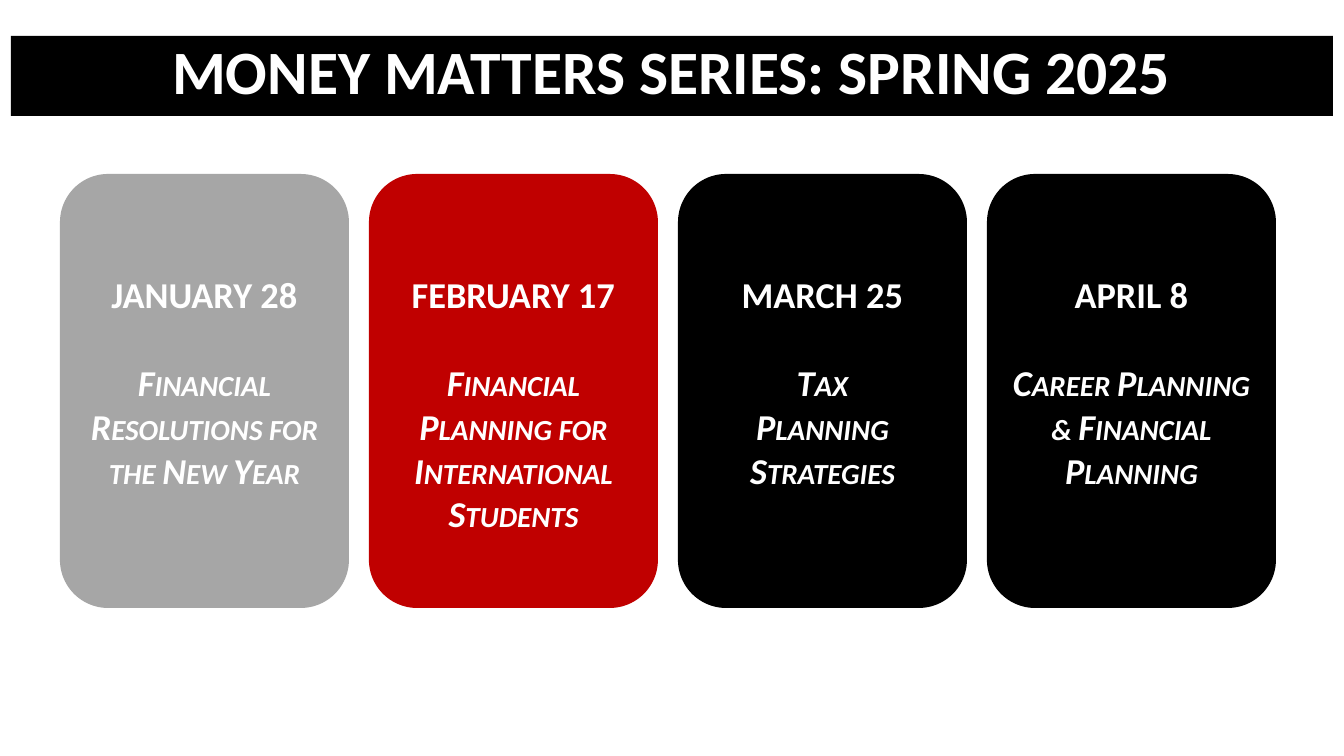
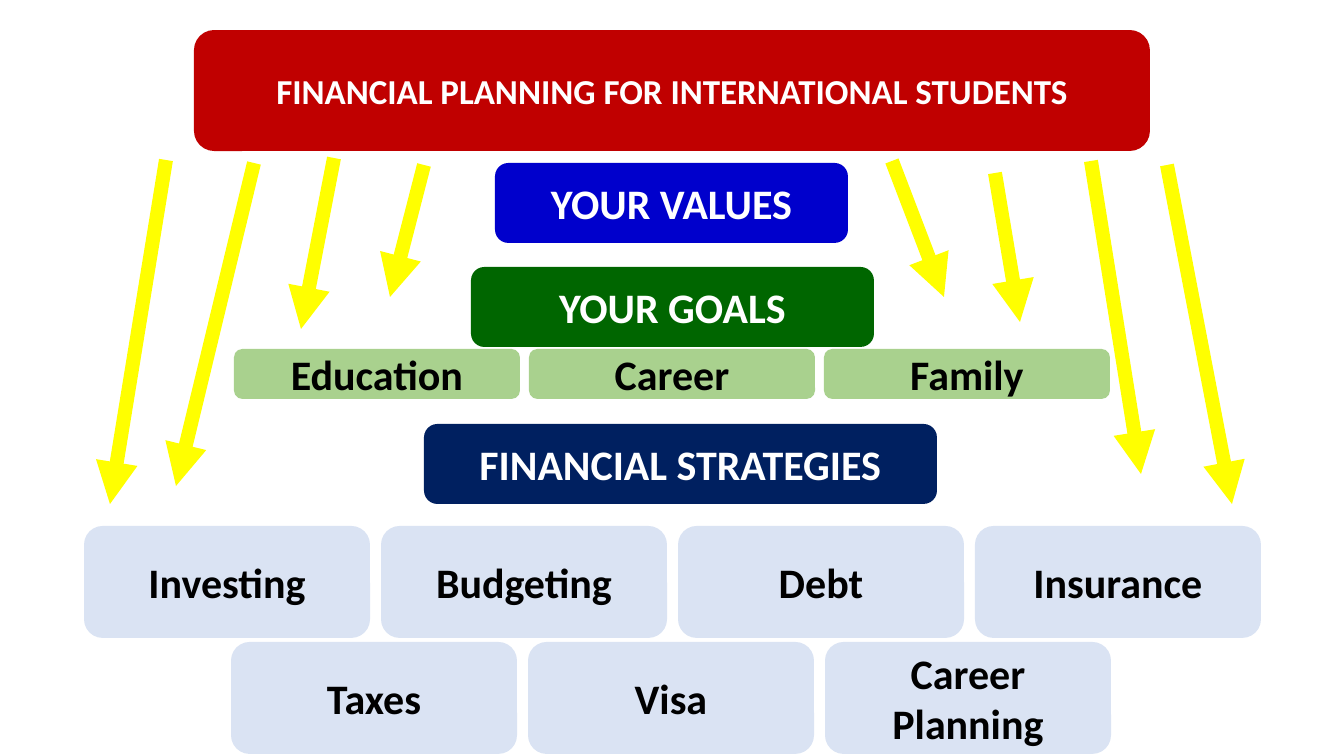
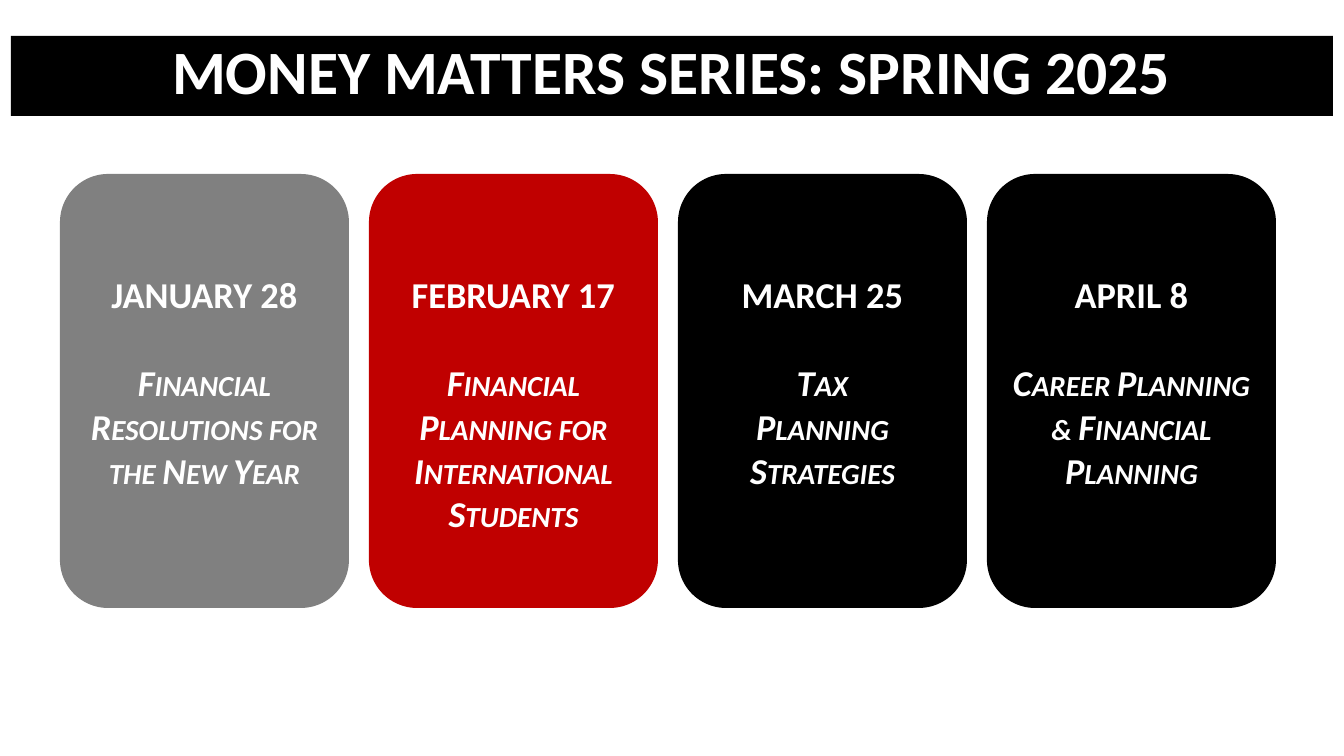
from lxml import etree
from pptx import Presentation
from pptx.dml.color import RGBColor
from pptx.enum.shapes import MSO_CONNECTOR, MSO_SHAPE
from pptx.enum.text import MSO_ANCHOR, PP_ALIGN
from pptx.oxml.ns import qn
from pptx.util import Pt

RECT, ROUND = MSO_SHAPE.RECTANGLE, MSO_SHAPE.ROUNDED_RECTANGLE
LINE = MSO_CONNECTOR.STRAIGHT
TOP, MIDDLE = MSO_ANCHOR.TOP, MSO_ANCHOR.MIDDLE
CENTER = PP_ALIGN.CENTER

# Colours and font
FONT = "Calibri"
WHITE, BLACK, RED = "FFFFFF", "000000", "C00000"
BLUE, GREEN, NAVY = "0000CC", "006600", "002060"
LIME, PALE, YELLOW = "A9D18E", "DAE3F3", "FFFF00"


def px(n):
    """Turn px into EMU; the slide is 1344 px wide."""
    return round(n * 12192000 / 1344)


def rgb(code):
    return RGBColor.from_string(code)


def write(para, text, size=30, color=WHITE, italic=False, caps=False,
          before=0, spacing=None):
    """Fill a paragraph with centred bold text."""
    para.alignment = CENTER
    para.space_before = Pt(before)
    if spacing:
        para.line_spacing = spacing
    para.text = text
    for run in para.runs:
        font = run.font
        font.name, font.size = FONT, Pt(size)
        font.bold, font.italic = True, italic
        font.color.rgb = rgb(color)
        if caps:
            run._r.get_or_add_rPr().set("cap", "small")


class Deck:
    def __init__(self):
        self.prs = Presentation()
        self.prs.slide_width, self.prs.slide_height = px(1344), px(756)
        self.slide = None

    def new(self):
        self.slide = self.prs.slides.add_slide(self.prs.slide_layouts[6])

    def block(self, x, y, w, h, fill, kind=ROUND, anchor=MIDDLE, inset=5):
        """Add a plain filled shape and return its text frame."""
        shape = self.slide.shapes.add_shape(kind, px(x), px(y), px(w), px(h))
        shape.shadow.inherit = False
        shape.fill.solid()
        shape.fill.fore_color.rgb = rgb(fill)
        shape.line.fill.background()
        frame = shape.text_frame
        frame.word_wrap = True
        frame.vertical_anchor = anchor
        frame.margin_top = px(inset)
        return frame

    def box(self, x, y, w, h, fill, text, **style):
        write(self.block(x, y, w, h, fill).paragraphs[0], text, **style)

    def row(self, x, y, h, step, fill, names):
        for i, name in enumerate(names):
            self.box(x + i * step, y, 286, h, fill, name, color=BLACK)

    def band(self, text):
        frame = self.block(11, 36, 1322, 80, BLACK, kind=RECT, anchor=TOP)
        write(frame.paragraphs[0], text, size=44, spacing=0.9)

    def card(self, x, fill, date, topic):
        frame = self.block(x, 174, 289, 434, fill, anchor=TOP, inset=84)
        write(frame.paragraphs[0], date, size=26)
        write(frame.add_paragraph(), topic, size=26, italic=True, caps=True,
              before=32)

    def arrow(self, x1, y1, x2, y2):
        link = self.slide.shapes.add_connector(
            LINE, px(x1), px(y1), px(x2), px(y2))
        link.line.color.rgb = rgb(YELLOW)
        link.line.width = Pt(10)
        ln = link.line._get_or_add_ln()
        etree.SubElement(ln, qn("a:tailEnd"), type="triangle")
        etree.SubElement(link._element.spPr, qn("a:effectLst"))


TALKS = [
    ("JANUARY 28", "Financial Resolutions for the New Year"),
    ("FEBRUARY 17", "Financial Planning for International Students"),
    ("MARCH 25", "Tax\vPlanning Strategies"),
    ("APRIL 8", "Career Planning\v& Financial Planning"),
]

ARROWS = [
    (166, 160, 110, 504), (254, 163, 176, 486),
    (334, 158, 301, 329), (424, 165, 390, 297),
    (892, 161, 944, 297), (995, 173, 1020, 322),
    (1091, 161, 1141, 474), (1167, 165, 1232, 504),
]


def series(deck, first):
    """Build the series overview; first is the fill of the first card."""
    deck.new()
    deck.band("MONEY MATTERS SERIES: SPRING 2025")
    fills = [first, RED, BLACK, BLACK]
    for i, (fill, talk) in enumerate(zip(fills, TALKS)):
        deck.card(60 + i * 309, fill, *talk)


def plan(deck):
    """Build the planning diagram."""
    deck.new()
    # Headings
    deck.box(194, 30, 956, 121, RED,
             "FINANCIAL PLANNING FOR INTERNATIONAL STUDENTS", size=25)
    deck.box(495, 163, 353, 80, BLUE, "YOUR VALUES")
    deck.box(471, 267, 403, 80, GREEN, "YOUR GOALS")
    deck.box(424, 424, 513, 80, NAVY, "FINANCIAL STRATEGIES")
    # Goals and strategies
    deck.row(234, 349, 50, 295, LIME, ["Education", "Career", "Family"])
    deck.row(84, 526, 112, 297, PALE,
             ["Investing", "Budgeting", "Debt", "Insurance"])
    deck.row(231, 642, 112, 297, PALE, ["Taxes", "Visa", "Career Planning"])
    # Arrows
    for ends in ARROWS:
        deck.arrow(*ends)


def main():
    deck = Deck()
    series(deck, "A6A6A6")
    plan(deck)
    series(deck, "808080")
    deck.prs.save("out.pptx")


if __name__ == "__main__":
    main()
